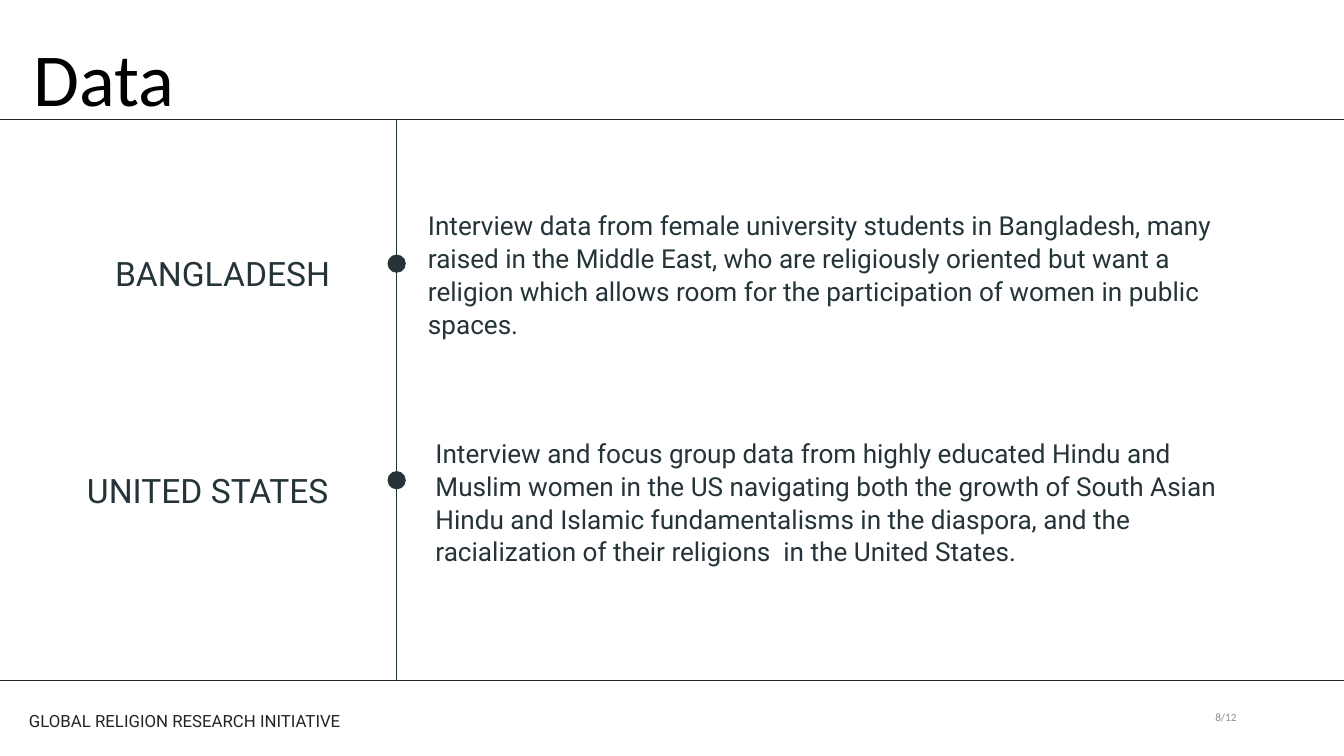
import dataclasses
import pptx
import pptx.dml.color
import pptx.enum.shapes
import pptx.enum.text
import pptx.oxml.ns
import pptx.util
from lxml import etree

Pt = pptx.util.Pt
Align = pptx.enum.text.PP_ALIGN
Anchor = pptx.enum.text.MSO_ANCHOR
INK, DARK, GREY = "253439", "242424", "8C8C8C"
WIDE, HIGH = 1440, 810
TOP, BASE, SPINE = 128, 729, 425


@dataclasses.dataclass
class Label:
    text: str
    box: tuple
    size: float
    color: str = INK
    font: str = "Roboto"
    align: Align = Align.LEFT
    lead: float | None = None
    anchor: Anchor = Anchor.TOP
    inset: tuple = (0, 0)
    wrap: bool = True


@dataclasses.dataclass
class Topic:
    dot: float
    name: Label
    body: Label


def color(code: str) -> pptx.dml.color.RGBColor:
    return pptx.dml.color.RGBColor.from_string(code)


def write(shape, label: Label) -> None:
    """Place a shape and fill it with the label's formatted text."""
    for side, value in zip(("left", "top", "width", "height"), label.box):
        setattr(shape, side, Pt(value))
    frame = shape.text_frame
    across, down = map(Pt, label.inset)
    style = {
        "margin_left": across, "margin_right": across,
        "margin_top": down, "margin_bottom": down,
        "word_wrap": label.wrap, "vertical_anchor": label.anchor,
        "auto_size": pptx.enum.text.MSO_AUTO_SIZE.NONE,
    }
    for key, value in style.items():
        setattr(frame, key, value)
    para = frame.paragraphs[0]
    para.alignment = label.align
    if label.lead:
        para.line_spacing = Pt(label.lead)
    run = para.add_run()
    run.text = label.text
    for key, value in {"name": label.font, "size": Pt(label.size)}.items():
        setattr(run.font, key, value)
    run.font.color.rgb = color(label.color)


def add_text(slide, label: Label) -> None:
    write(slide.shapes.add_textbox(0, 0, 0, 0), label)


def add_line(slide, ends: tuple, code: str) -> None:
    line = slide.shapes.add_connector(
        pptx.enum.shapes.MSO_CONNECTOR.STRAIGHT, *map(Pt, ends))
    line.line.color.rgb = color(code)
    line.line.width = Pt(0.75)
    etree.SubElement(line._element.spPr, pptx.oxml.ns.qn("a:effectLst"))


def add_dot(slide, mid: float, size: float = 19.6) -> None:
    dot = slide.shapes.add_shape(
        pptx.enum.shapes.MSO_SHAPE.OVAL, Pt(SPINE - size / 2),
        Pt(mid - size / 2), Pt(size), Pt(size))
    dot.shadow.inherit = False
    dot.fill.solid()
    dot.fill.fore_color.rgb = color(INK)
    dot.line.fill.background()


def name(text: str, left: float, top: float) -> Label:
    return Label(text, (left, top, 284, 41), 36, align=Align.CENTER, lead=39.6)


def body(text: str, left: float, top: float) -> Label:
    return Label(text, (left, top, 875.5, 140), 28, lead=35.1)


TITLE = Label("Data", (36, 29.5, 1278, 100), 80, "000000", "Calibri", lead=100.8)
TOPICS = [
    Topic(282.5, name("BANGLADESH", 96.5, 275), body(
        "Interview data from female university students in Bangladesh, many "
        "raised in the Middle East, who are religiously oriented but want a "
        "religion which allows room for the participation of women in public "
        "spaces.", 458.6, 223.2)),
    Topic(514.5, name("UNITED STATES", 80.6, 507), body(
        "Interview and focus group data from highly educated Hindu and Muslim "
        "women in the US navigating both the growth of South Asian Hindu and "
        "Islamic fundamentalisms in the diaspora, and the racialization of "
        "their religions  in the United States.", 466.6, 467.3)),
]
NOTES = [
    Label("GLOBAL RELIGION RESEARCH INITIATIVE", (24, 757.5, 385, 28), 18, DARK,
          align=Align.JUSTIFY, lead=22.4, inset=(7.2, 3.6), wrap=False),
    Label("8/12", (1199.5, 754, 228, 28.8), 12, GREY, "Calibri", Align.CENTER,
          anchor=Anchor.MIDDLE, inset=(7.2, 3.6)),
]


def main() -> None:
    deck = pptx.Presentation()
    deck.slide_width, deck.slide_height = Pt(WIDE), Pt(HIGH)
    slide = deck.slides.add_slide(deck.slide_layouts[5])
    write(slide.shapes.title, TITLE)
    add_line(slide, (SPINE, TOP, SPINE, BASE), INK)
    for level in (TOP, BASE):
        add_line(slide, (0, level, WIDE, level), DARK)
    for topic in TOPICS:
        add_dot(slide, topic.dot)
        add_text(slide, topic.name)
        add_text(slide, topic.body)
    for note in NOTES:
        add_text(slide, note)
    deck.save("out.pptx")


if __name__ == "__main__":
    main()
